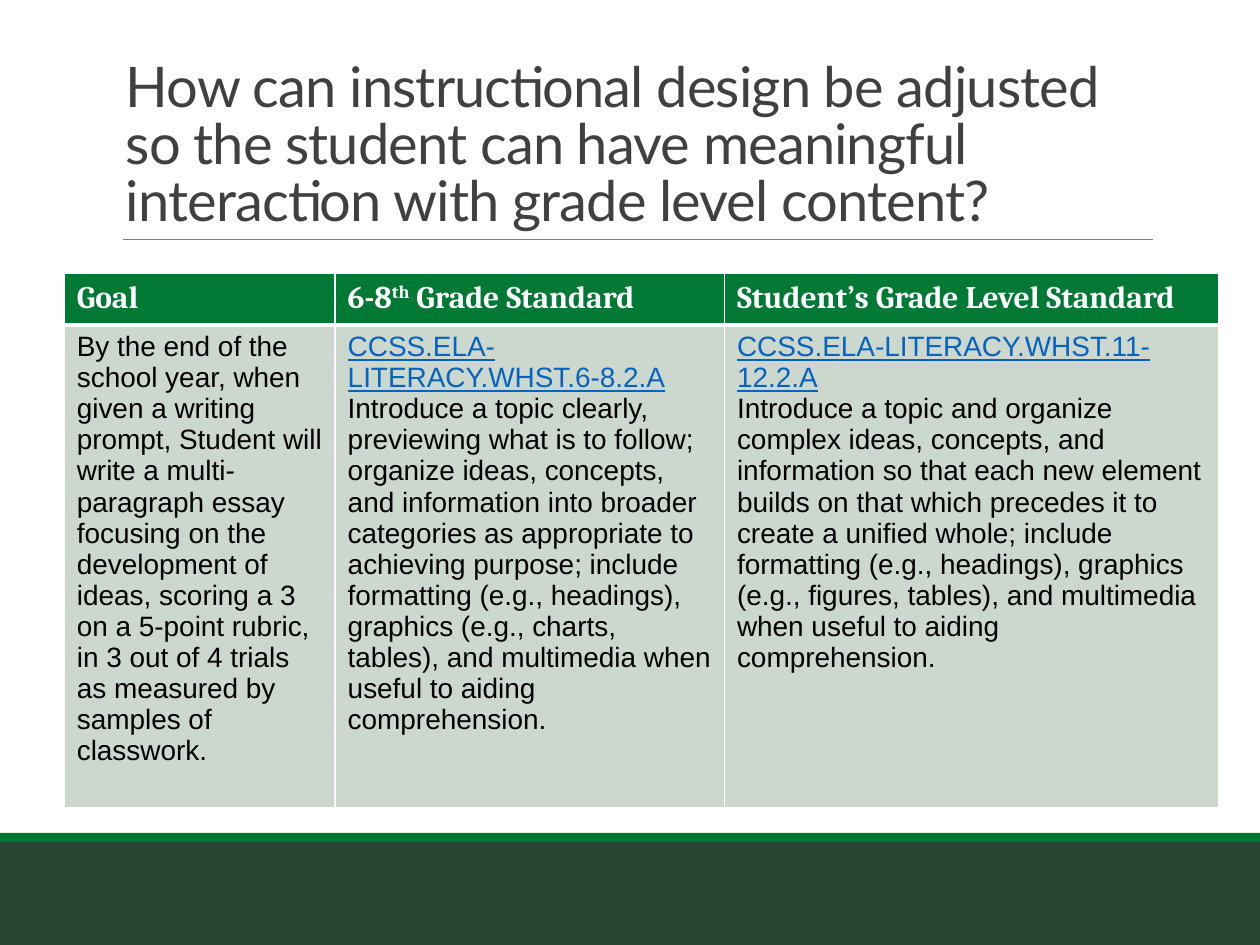
from lxml.etree import SubElement
from pptx import Presentation
from pptx.dml.color import RGBColor
from pptx.enum.shapes import MSO_CONNECTOR as Connector, MSO_SHAPE as Shape
from pptx.enum.text import MSO_ANCHOR as Anchor
from pptx.oxml.ns import qn
from pptx.util import Inches, Pt

WIDTH, HEIGHT = 10, 7.5
GREEN, DARK_GREEN, PALE_GREEN = "007935", "294635", "CCD7CE"
WHITE, BLACK, GRAY, LINK_BLUE = "FFFFFF", "000000", "808080", "0563C1"
TITLE = ("How can instructional design be adjusted so the student can have "
         "meaningful interaction with grade level content?")
HEADINGS = [
    [("Goal", {})],
    [("6-8", {}), ("th", {"raised": True}), (" Grade Standard", {})],
    [("Student’s Grade Level Standard", {})],
]
LINK = {"color": LINK_BLUE, "underline": True}
DETAILS = [
    [("By the end of the school year, when given a writing prompt, Student will "
      "write a multi-paragraph essay focusing on the development of ideas, "
      "scoring a 3 on a 5-point rubric, in 3 out of 4 trials as measured by "
      "samples of classwork.", {})],
    [("CCSS.ELA-LITERACY.WHST.6-8.2.A", LINK), None,
     ("Introduce a topic clearly, previewing what is to follow; organize ideas, "
      "concepts, and information into broader categories as appropriate to "
      "achieving purpose; include formatting (e.g., headings), graphics (e.g., "
      "charts, tables), and multimedia when useful to aiding comprehension.", {})],
    [("CCSS.ELA-LITERACY.WHST.11-12.2.A", LINK), None,
     ("Introduce a topic and organize complex ideas, concepts, and information "
      "so that each new element builds on that which precedes it to create a "
      "unified whole; include formatting (e.g., headings), graphics (e.g., "
      "figures, tables), and multimedia when useful to aiding comprehension.", {})],
]


def rgb(value):
    """Turn a hex string into a colour."""
    return RGBColor.from_string(value)


def add_run(paragraph, text, font, size, color, bold=False, underline=False, raised=False):
    """Append one formatted run and return it."""
    run = paragraph.add_run()
    run.text = text
    run.font.name, run.font.size = font, Pt(size)
    run.font.color.rgb = rgb(color)
    run.font.bold, run.font.underline = bold, underline
    if raised:
        run.font._element.set("baseline", "30000")
    return run


def add_band(slide, box, color):
    """Draw a plain filled band in the box."""
    band = slide.shapes.add_shape(Shape.RECTANGLE, *map(Inches, box))
    band.shadow.inherit = False
    band.fill.solid()
    band.fill.fore_color.rgb = rgb(color)
    band.line.fill.background()


def add_footer(slide, top, stripe):
    """Fill the foot of the slide with a dark band under a bright stripe."""
    add_band(slide, (0, top + 0.05, WIDTH, HEIGHT - top - 0.05), DARK_GREEN)
    add_band(slide, (0, top, WIDTH, stripe), GREEN)


def add_title(slide, box):
    """Set the title at the bottom of the box with a rule below it."""
    left, top, width, height = box
    bottom = Inches(top + height)
    rule = slide.shapes.add_connector(
        Connector.STRAIGHT, Inches(left + 0.08), bottom, Inches(left + width), bottom)
    rule.line.color.rgb = rgb(GRAY)
    rule.line.width = Pt(0.5)
    SubElement(rule._element.spPr, qn("a:effectLst"))
    frame = slide.shapes.add_textbox(*map(Inches, box)).text_frame
    frame.word_wrap = True
    frame.vertical_anchor = Anchor.BOTTOM
    paragraph = frame.paragraphs[0]
    paragraph.line_spacing = 0.85
    run = add_run(paragraph, TITLE, "Lato", 32, "404040")
    run.font._element.set("spc", "-50")


def add_borders(cell, bottom):
    """Give the cell white borders, with its own bottom width in points."""
    properties = cell._tc.get_or_add_tcPr()
    widths = {"lnL": 1, "lnR": 1, "lnT": 1, "lnB": bottom}
    for position, (side, width) in enumerate(widths.items()):
        line = SubElement(properties, qn(f"a:{side}"), w=str(Pt(width)))
        fill = SubElement(line, qn("a:solidFill"))
        SubElement(fill, qn("a:srgbClr"), val=WHITE)
        properties.insert(position, line)


def fill_cell(cell, parts, fill, bottom, style):
    """Fill one cell with its colour, borders and runs; None breaks the line."""
    cell.fill.solid()
    cell.fill.fore_color.rgb = rgb(fill)
    add_borders(cell, bottom)
    paragraph = cell.text_frame.paragraphs[0]
    for part in parts:
        if part is None:
            paragraph.add_line_break()
        else:
            text, changes = part
            add_run(paragraph, text, **{**style, **changes})


def add_standards_table(slide, box, column_widths, header_height):
    """Place the table of the goal and the two standards in the box."""
    table = slide.shapes.add_table(2, len(column_widths), *map(Inches, box)).table
    for column, width in zip(table.columns, column_widths):
        column.width = Inches(width)
    for row, height in zip(table.rows, (header_height, box[3] - header_height)):
        row.height = Inches(height)
    heading_style = {"font": "Cambria", "size": 18, "color": WHITE, "bold": True}
    detail_style = {"font": "Arial", "size": 16, "color": BLACK}
    for index, (heading, detail) in enumerate(zip(HEADINGS, DETAILS)):
        fill_cell(table.cell(0, index), heading, GREEN, 3, heading_style)
        fill_cell(table.cell(1, index), detail, PALE_GREEN, 1, detail_style)


def main():
    """Build and save the slide."""
    presentation = Presentation()
    presentation.slide_width, presentation.slide_height = Inches(WIDTH), Inches(HEIGHT)
    slide = presentation.slides.add_slide(presentation.slide_layouts[6])
    add_footer(slide, 6.61, 0.07)
    add_title(slide, (0.9, 0.31, 8.25, 1.59))
    add_standards_table(slide, (0.51, 2.17, 9.16, 3.95), (2.15, 3.09, 3.92), 0.41)
    presentation.save("out.pptx")


if __name__ == "__main__":
    main()
